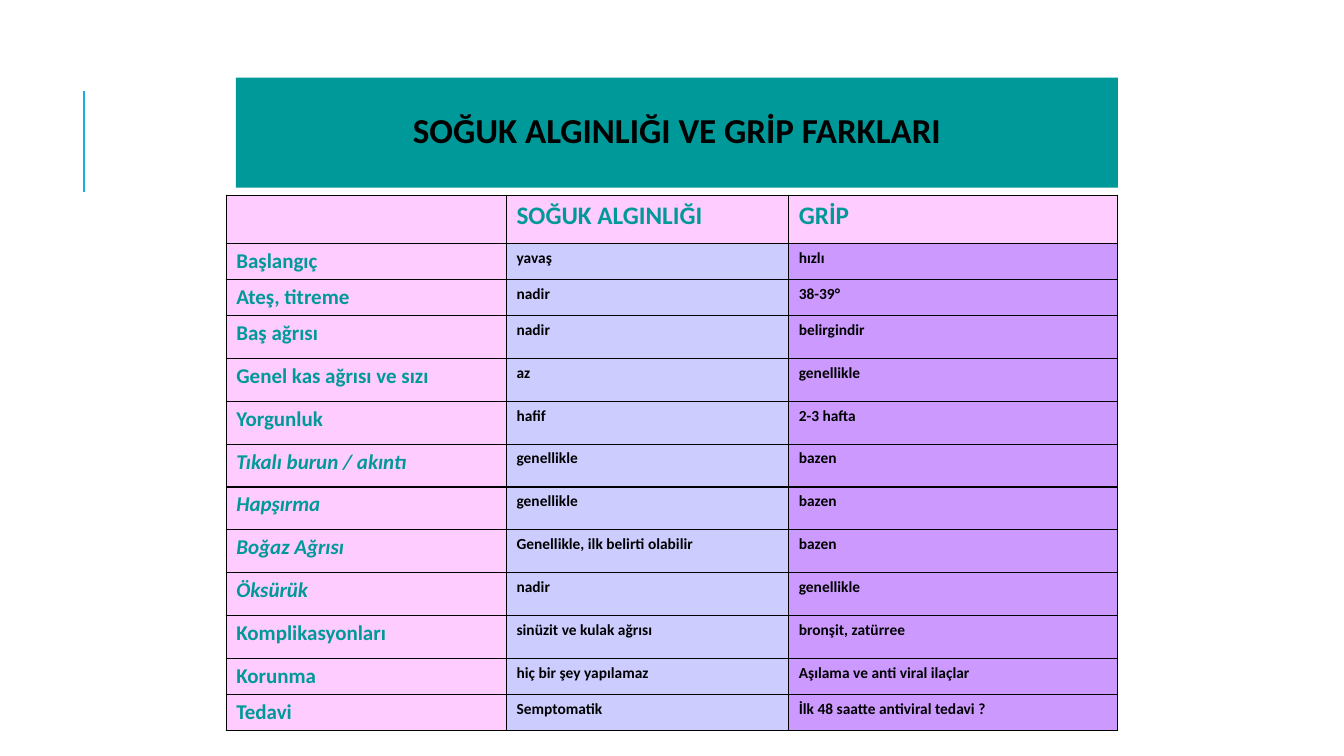
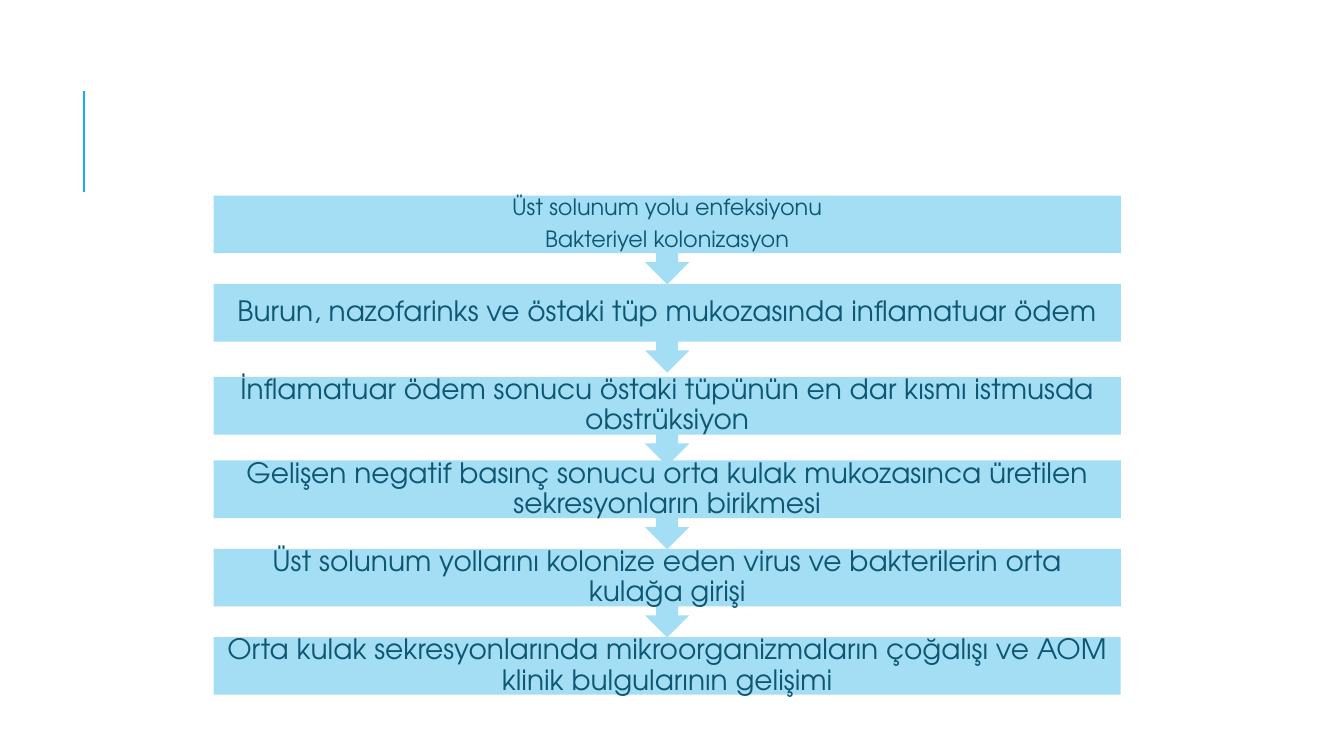
from dataclasses import dataclass

from lxml.etree import SubElement
from pptx import Presentation
from pptx.dml.color import RGBColor
from pptx.enum.shapes import MSO_CONNECTOR as Connector, MSO_SHAPE as Shape
from pptx.enum.text import MSO_ANCHOR as Anchor, MSO_AUTO_SIZE as AutoSize, PP_ALIGN as Align
from pptx.oxml.ns import qn
from pptx.util import Pt

TITLE = "SOĞUK ALGINLIĞI VE GRİP FARKLARI"
HEADER = ("", "SOĞUK ALGINLIĞI", "GRİP")
SYMPTOMS = [
    ("Başlangıç", "yavaş", "hızlı"),
    ("Ateş, titreme", "nadir", "38-39°"),
    ("Baş ağrısı", "nadir", "belirgindir"),
    ("Genel kas ağrısı ve sızı", "az", "genellikle"),
    ("Yorgunluk", "hafif", "2-3 hafta"),
    ("Tıkalı burun / akıntı", "genellikle", "bazen"),
    ("Hapşırma", "genellikle", "bazen"),
    ("Boğaz Ağrısı", "Genellikle, ilk belirti olabilir", "bazen"),
    ("Öksürük", "nadir", "genellikle"),
    ("Komplikasyonları", "sinüzit ve kulak ağrısı", "bronşit, zatürree"),
    ("Korunma", "hiç bir şey yapılamaz", "Aşılama ve anti viral ilaçlar"),
    ("Tedavi", "Semptomatik", "İlk 48 saatte antiviral tedavi ?"),
]
ITALIC_LABELS = {"Tıkalı burun / akıntı", "Hapşırma", "Boğaz Ağrısı", "Öksürük"}
SHORT_ROWS = {"Başlangıç", "Ateş, titreme", "Korunma", "Tedavi"}
STEPS = [
    ["Üst solunum yolu enfeksiyonu", "Bakteriyel kolonizasyon"],
    ["Burun, nazofarinks ve östaki tüp mukozasında inflamatuar ödem"],
    ["İnflamatuar ödem sonucu östaki tüpünün en dar kısmı istmusda obstrüksiyon"],
    ["Gelişen negatif basınç sonucu orta kulak mukozasınca üretilen sekresyonların birikmesi"],
    ["Üst solunum yollarını kolonize eden virus ve bakterilerin orta kulağa girişi"],
    ["Orta kulak sekresyonlarında mikroorganizmaların çoğalışı ve AOM klinik bulgularının gelişimi"],
]


@dataclass(frozen=True)
class Theme:
    table_font: str = "Calibri"
    step_font: str = "TeX Gyre Adventor"
    accent: str = "1CADE4"
    teal: str = "009999"
    black: str = "000000"
    pink: str = "FFCCFF"
    lilac: str = "CCCCFF"
    violet: str = "CC99FF"
    step_fill: str = "A4DEF4"
    step_text: str = "0E5772"
    title_size: float = 25
    header_size: float = 18
    label_size: float = 15
    value_size: float = 11
    step_size: float = 20
    pair_size: float = 16


THEME = Theme()
COLUMN_WIDTHS = (200.2, 201.6, 234.7)
HEADER_HEIGHT, SHORT_HEIGHT, TALL_HEIGHT = 34.4, 25.8, 30.6
STEP_LEFT, STEP_TOP, STEP_WIDTH = 152.6, 139.7, 648
STEP_HEIGHT, CALLOUT_HEIGHT, STEP_PITCH = 41.2, 63.4, 63.07
STEP_NUDGES = {2: 3.4}


def color(code):
    return RGBColor.from_string(code)


def set_font(para, name, size, code, bold=False, italic=False):
    font = para.font
    font.name, font.size, font.bold, font.italic = name, Pt(size), bold, italic
    font.color.rgb = color(code)


def fill_shape(shape, code):
    shape.fill.solid()
    shape.fill.fore_color.rgb = color(code)


def add_master_rule(deck, page):
    rule = page.shapes.add_connector(Connector.STRAIGHT, Pt(60), Pt(137), Pt(60), Pt(65))
    rule.line.color.rgb = color(THEME.accent)
    rule.line.width = Pt(1.5)
    SubElement(rule.element.spPr, qn("a:effectLst"))
    rule.element.nvCxnSpPr.cNvPr.set("id", "20")
    deck.slide_master.shapes.element.append(rule.element)


def add_title(page):
    title = page.shapes.title
    title.left, title.top, title.width, title.height = Pt(168.5), Pt(55.5), Pt(630), Pt(78.5)
    fill_shape(title, THEME.teal)
    frame = title.text_frame
    frame.text = TITLE
    frame.auto_size = AutoSize.NONE
    frame.vertical_anchor = Anchor.MIDDLE
    para = frame.paragraphs[0]
    para.alignment, para.line_spacing = Align.CENTER, 0.9
    set_font(para, THEME.table_font, THEME.title_size, THEME.black, bold=True)


def add_borders(cell):
    properties = cell._tc.get_or_add_tcPr()
    for side in ("L", "R", "T", "B"):
        line = SubElement(properties, qn(f"a:ln{side}"), w=str(Pt(1)))
        SubElement(SubElement(line, qn("a:solidFill")), qn("a:srgbClr"), val=THEME.black)


def cell_style(row, column):
    if row == 0:
        return THEME.header_size, THEME.teal, THEME.pink
    if column == 0:
        return THEME.label_size, THEME.teal, THEME.pink
    return THEME.value_size, THEME.black, (THEME.lilac, THEME.violet)[column - 1]


def add_symptom_table(page):
    rows = [HEADER, *SYMPTOMS]
    heights = [HEADER_HEIGHT] + [SHORT_HEIGHT if row[0] in SHORT_ROWS else TALL_HEIGHT for row in SYMPTOMS]
    table = page.shapes.add_table(len(rows), len(HEADER), Pt(161.6), Pt(139.5),
                                  Pt(sum(COLUMN_WIDTHS)), Pt(sum(heights))).table
    table.first_row = table.horz_banding = False
    for column, width in zip(table.columns, COLUMN_WIDTHS):
        column.width = Pt(width)
    for r, (texts, height) in enumerate(zip(rows, heights)):
        table.rows[r].height = Pt(height)
        for c, text in enumerate(texts):
            size, text_color, fill = cell_style(r, c)
            cell = table.cell(r, c)
            add_borders(cell)
            fill_shape(cell, fill)
            cell.text = text
            set_font(cell.text_frame.paragraphs[0], THEME.table_font, size, text_color,
                     bold=True, italic=text in ITALIC_LABELS)


def add_step(page, index, lines):
    last = index == len(STEPS) - 1
    top = STEP_TOP + index * STEP_PITCH + STEP_NUDGES.get(index, 0)
    box = page.shapes.add_shape(
        Shape.RECTANGLE if last else Shape.DOWN_ARROW_CALLOUT,
        Pt(STEP_LEFT), Pt(top), Pt(STEP_WIDTH), Pt(STEP_HEIGHT if last else CALLOUT_HEIGHT))
    box.shadow.inherit = False
    fill_shape(box, THEME.step_fill)
    box.line.fill.background()
    size = THEME.pair_size if len(lines) > 1 else THEME.step_size
    frame = box.text_frame
    frame.word_wrap = True
    frame.vertical_anchor = Anchor.MIDDLE
    frame.margin_left = frame.margin_right = frame.margin_top = frame.margin_bottom = Pt(size * 0.43)
    frame.text = "\n".join(lines)
    for para in frame.paragraphs:
        para.alignment, para.line_spacing = Align.CENTER, 0.9
        para.space_after = Pt(size * 0.35)
        set_font(para, THEME.step_font, size, THEME.step_text)


def main():
    deck = Presentation()
    deck.slide_width, deck.slide_height = Pt(960), Pt(540)
    comparison = deck.slides.add_slide(deck.slide_layouts.get_by_name("Title Only"))
    add_master_rule(deck, comparison)
    add_title(comparison)
    add_symptom_table(comparison)
    process = deck.slides.add_slide(deck.slide_layouts.get_by_name("Blank"))
    for index, lines in reversed(list(enumerate(STEPS))):
        add_step(process, index, lines)
    deck.save("out.pptx")


if __name__ == "__main__":
    main()
